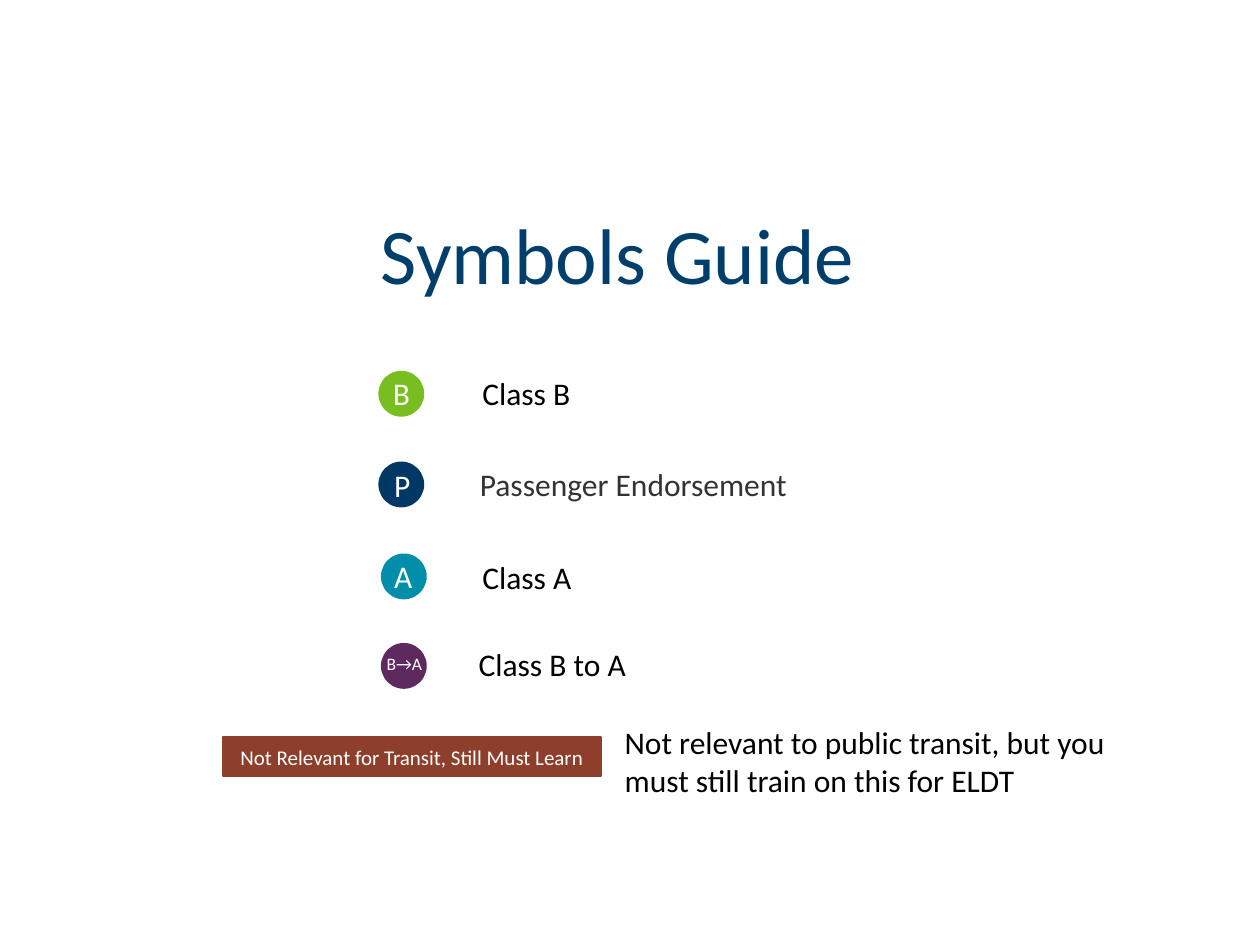
from pptx import Presentation
from pptx import util as u
from pptx.dml.color import RGBColor
from pptx.enum import shapes, text

PX = u.Inches(1) // 100
FONT = "Calibri"
COLORS = {
    "title": "003E6C", "black": "000000", "gray": "333333", "white": "FFFFFF",
    "green": "78BE21", "navy": "003865", "teal": "008EAA", "purple": "5D295F",
    "rust": "8D3F2B",
}
DOT = 35

# circle left and top, fill, letter, letter size, letter box (dx, dy, w, h),
# label, label box (dx, dy, w), label colour
SYMBOLS = [
    (301, 295, "green", "B", 18, (1, -3, 33, 40), "Class B", (72, -3, 300), "black"),
    (301, 367, "navy", "P", 18, (2, -2, 33, 40), "Passenger Endorsement", (70, -3, 369), "gray"),
    (303, 440, "teal", "A", 18, (0, -3, 33, 40), "Class A", (70, -2, 300), "black"),
    (303, 511, "purple", "B→A", 10, (-6, 2, 55, 27), "Class B to A", (67, -4, 300), "black"),
]


def emu(*lengths):
    return [u.Emu(n * PX) for n in lengths]


def rgb(name):
    return RGBColor.from_string(COLORS[name])


def write(sp, words, size, color, align=text.PP_ALIGN.LEFT, anchor=text.MSO_ANCHOR.TOP):
    tf = sp.text_frame
    tf.text = words
    tf.word_wrap = True
    tf.vertical_anchor = anchor
    p = tf.paragraphs[0]
    p.alignment = align
    font = p.runs[0].font
    font.name, font.size = FONT, u.Pt(size)
    font.color.rgb = rgb(color)
    return p


def add_text(slide, box, words, size, color):
    sp = slide.shapes.add_textbox(*emu(*box))
    write(sp, words, size, color)
    sp.text_frame.auto_size = text.MSO_AUTO_SIZE.SHAPE_TO_FIT_TEXT


def add_filled(slide, kind, box, color):
    sp = slide.shapes.add_shape(kind, *emu(*box))
    sp.shadow.inherit = False
    sp.fill.solid()
    sp.fill.fore_color.rgb = rgb(color)
    sp.line.color.rgb = rgb(color)
    sp.line.width = u.Pt(1)
    return sp


def set_title(slide, box, words):
    sp = slide.shapes.title
    sp.left, sp.top, sp.width, sp.height = emu(*box)
    p = write(sp, words, 45, "title", text.PP_ALIGN.CENTER, text.MSO_ANCHOR.BOTTOM)
    p.line_spacing = 0.9
    sp.text_frame.auto_size = text.MSO_AUTO_SIZE.NONE


def add_symbol(slide, x, y, fill, letter, size, letter_box, label, label_box, color):
    """Coloured circle with its letter, and the meaning to its right."""
    add_filled(slide, shapes.MSO_SHAPE.OVAL, (x, y, DOT, DOT), fill)
    dx, dy, w, h = letter_box
    add_text(slide, (x + dx, y + dy, w, h), letter, size, "white")
    dx, dy, w = label_box
    add_text(slide, (x + dx, y + dy, w, 40), label, 18, color)


def add_transit_note(slide, x, y):
    """Banner with its explanation to the right."""
    banner = add_filled(slide, shapes.MSO_SHAPE.RECTANGLE, (x, y, 300, 31), "rust")
    write(banner, "Not Relevant for Transit, Still Must Learn", 12, "white",
          text.PP_ALIGN.CENTER, text.MSO_ANCHOR.MIDDLE)
    add_text(slide, (x + 309, y - 16, 426, 71),
             "Not relevant to public transit, but you must still train on this for ELDT",
             18, "black")


def main():
    prs = Presentation()
    prs.slide_width, prs.slide_height = emu(1000, 750)
    slide = prs.slides.add_slide(prs.slide_layouts[5])
    set_title(slide, (115, 157, 750, 87), "Symbols Guide")
    for symbol in SYMBOLS:
        add_symbol(slide, *symbol)
    add_transit_note(slide, 177, 585)
    prs.save("out.pptx")


if __name__ == "__main__":
    main()
